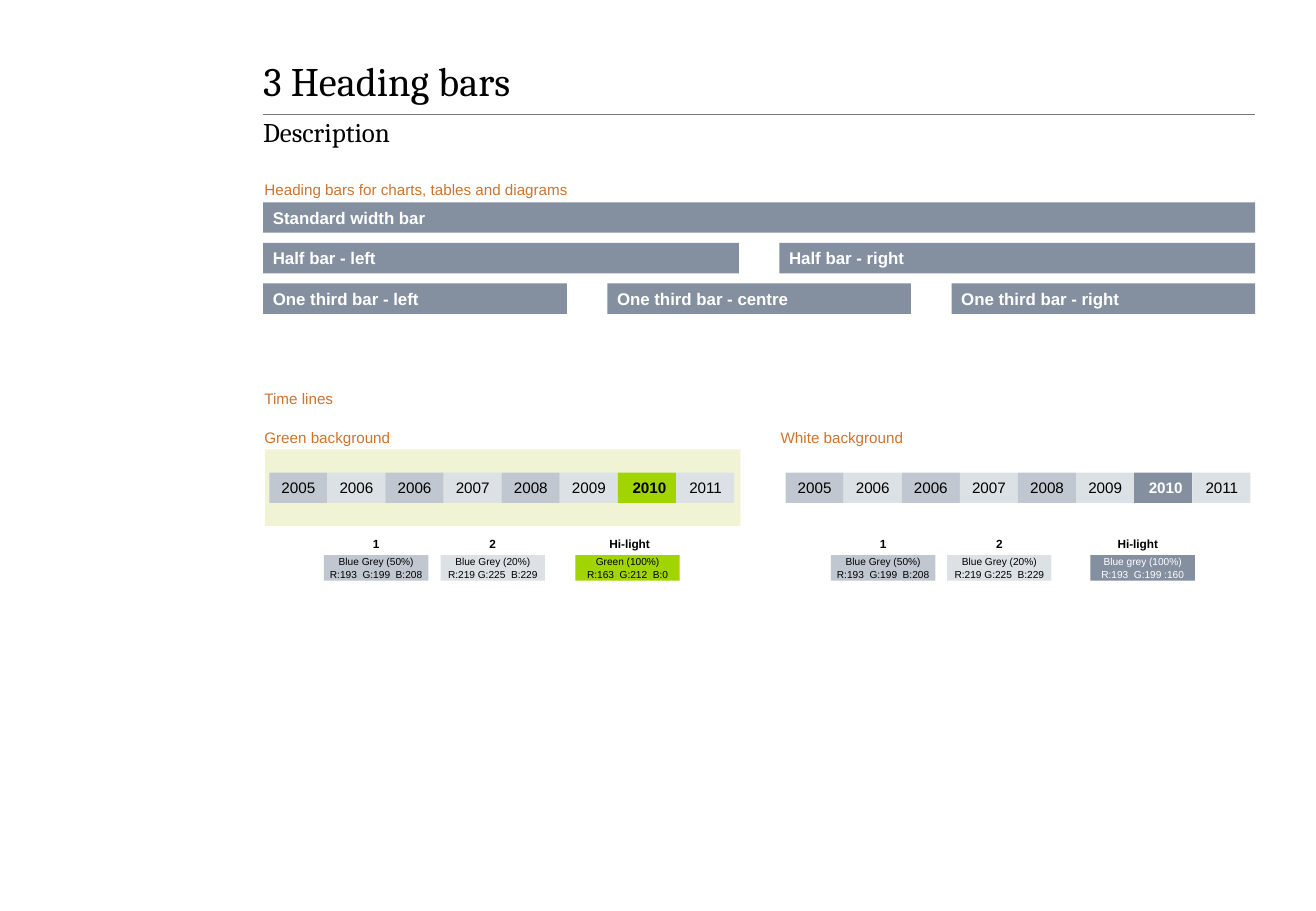
from dataclasses import dataclass

import pptx
import pptx.dml.color
import pptx.enum.shapes
import pptx.enum.text
import pptx.oxml
import pptx.shapes.autoshape
import pptx.util
from pptx.dml.color import RGBColor

Align = pptx.enum.text.PP_ALIGN
Anchor = pptx.enum.text.MSO_ANCHOR

BLACK = RGBColor(0x00, 0x00, 0x00)
WHITE = RGBColor(0xFF, 0xFF, 0xFF)
ORANGE = RGBColor(0xCF, 0x74, 0x2F)
RULE_GREY = RGBColor(0x78, 0x78, 0x78)
BLUE_GREY = RGBColor(0x84, 0x8F, 0xA0)
BLUE_GREY_50 = RGBColor(0xC1, 0xC7, 0xD0)
BLUE_GREY_20 = RGBColor(0xDB, 0xE1, 0xE5)
GREEN = RGBColor(0xA2, 0xD4, 0x00)
PALE_GREEN = RGBColor(0xF0, 0xF4, 0xD4)

# The grid is square: 32.5 columns by 22.5 rows, three cells to the inch.
COLUMNS, ROWS = 32.5, 22.5
LEFT, WIDTH, GUTTER = 6.5, 24.5, 1
BAR_HEIGHT = 0.75
BAR_TOP = 5
TIMELINE_TOP = 11.67
SWATCH_TOP, SWATCH_WIDTH, SWATCH_HEIGHT = 13.71, 2.58, 0.63
LABEL_TOP, LABEL_WIDTH, LABEL_HEIGHT = 13.26, 1.5, 0.36
YEARS = ["2005", "2006", "2006", "2007", "2008", "2009", "2010", "2011"]
HIGHLIGHT_YEAR = "2010"
BAR_ROWS = [
    ["Standard width bar"],
    ["Half bar - left", "Half bar - right"],
    ["One third bar - left", "One third bar - centre", "One third bar - right"],
]


@dataclass(frozen=True)
class Area:
    """A rectangle in grid cells."""
    left: float
    top: float
    width: float
    height: float

    def lengths(self) -> list[pptx.util.Length]:
        return [grid(n) for n in (self.left, self.top, self.width, self.height)]


@dataclass(frozen=True)
class Style:
    size: float
    colour: RGBColor = BLACK
    bold: bool = False
    align: Align = Align.LEFT
    font: str = "Arial"
    inset: float = 0
    anchor: Anchor = Anchor.MIDDLE
    wrap: bool = True
    spacing: float = 1.0


@dataclass(frozen=True)
class Swatch:
    label: str
    text: str
    offset: float
    fill: RGBColor
    colour: RGBColor = BLACK
    label_shift: float = 0


@dataclass(frozen=True)
class Timeline:
    caption: str
    highlight: RGBColor
    highlight_text: RGBColor
    swatches: list[Swatch]


LIGHT_50 = "Blue Grey (50%)\vR:193  G:199  B:208"
LIGHT_20 = "Blue Grey (20%)\vR:219 G:225  B:229"
TIMELINES = [
    Timeline("Green background", GREEN, BLACK, [
        Swatch("1", LIGHT_50, 1.5, BLUE_GREY_50),
        Swatch("2", LIGHT_20, 4.38, BLUE_GREY_20),
        Swatch("Hi-light", "Green (100%)\vR:163  G:212  B:0", 7.71, GREEN,
               label_shift=0.05),
    ]),
    Timeline("White background", BLUE_GREY, WHITE, [
        Swatch("1", LIGHT_50, 1.27, BLUE_GREY_50),
        Swatch("2", LIGHT_20, 4.14, BLUE_GREY_20),
        Swatch("Hi-light", "Blue grey (100%)\vR:193  G:199 :160", 7.68,
               BLUE_GREY, WHITE, label_shift=-0.12),
    ]),
]

TITLE = Style(24, font="Cambria")
SUBTITLE = Style(16, font="Cambria", anchor=Anchor.TOP)
CAPTION = Style(9, ORANGE, anchor=Anchor.TOP, spacing=1.05)
BAR = Style(10, WHITE, bold=True, inset=0.24)
YEAR = Style(9, align=Align.RIGHT, inset=0.3, wrap=False)
LABEL = Style(7, bold=True, align=Align.CENTER, anchor=Anchor.TOP)


def grid(cells: float) -> pptx.util.Length:
    return pptx.util.Inches(cells / 3)


def column(count: int, index: int, top: float, height: float) -> Area:
    """One of count equal columns across the content width."""
    width = (WIDTH - GUTTER * (count - 1)) / count
    return Area(LEFT + index * (width + GUTTER), top, width, height)


def write(shape, text: str, style: Style, bottom: float = 0) -> None:
    frame = shape.text_frame
    frame.word_wrap = style.wrap
    frame.vertical_anchor = style.anchor
    frame.margin_left = frame.margin_right = grid(style.inset)
    frame.margin_top, frame.margin_bottom = 0, grid(bottom)
    para = frame.paragraphs[0]
    para.text = text
    para.alignment = style.align
    para.line_spacing = style.spacing
    para.font.name = style.font
    para.font.size = pptx.util.Pt(style.size)
    para.font.bold = style.bold
    para.font.color.rgb = style.colour


def add_text(shapes, area: Area, text: str, style: Style, bottom: float = 0) -> None:
    write(shapes.add_textbox(*area.lengths()), text, style, bottom)


def add_box(shapes, area: Area, fill: RGBColor) -> pptx.shapes.autoshape.Shape:
    box = shapes.add_shape(pptx.enum.shapes.MSO_SHAPE.RECTANGLE, *area.lengths())
    box.shadow.inherit = False
    box.fill.solid()
    box.fill.fore_color.rgb = fill
    box.line.fill.background()
    return box


def add_header(shapes) -> None:
    rule = shapes.add_connector(pptx.enum.shapes.MSO_CONNECTOR.STRAIGHT, grid(LEFT),
                                grid(2.82), grid(LEFT + WIDTH), grid(2.82))
    rule.line.color.rgb = RULE_GREY
    rule.line.width = pptx.util.Pt(0.5)
    rule.element.spPr.append(pptx.oxml.parse_xml(
        '<a:effectLst xmlns:a="http://schemas.openxmlformats.org/drawingml/2006/main"/>'))
    add_text(shapes, column(1, 0, 1.59, 1.17), "3\u00a0Heading bars", TITLE, 0.36)
    add_text(shapes, column(1, 0, 2.85, 1.05), "Description", SUBTITLE, 0.36)


def add_caption(shapes, area: Area, text: str) -> None:
    add_text(shapes, Area(area.left + 0.03, area.top, area.width, area.height), text, CAPTION)


def add_timeline(shapes, timeline: Timeline, half: Area) -> None:
    start, cell = half.left + 0.15, (half.width - 0.27) / len(YEARS)
    years = shapes.add_group_shape().shapes
    for index, year in enumerate(YEARS):
        fill, style = (BLUE_GREY_50, BLUE_GREY_20)[index % 2], YEAR
        if year == HIGHLIGHT_YEAR:
            fill = timeline.highlight
            style = Style(9, timeline.highlight_text, True, Align.RIGHT, inset=0.24)
        area = Area(start + index * cell, TIMELINE_TOP, cell, BAR_HEIGHT)
        write(add_box(years, area, fill), year, style)


def add_swatch(shapes, swatch: Swatch, half: Area) -> None:
    left = half.left + swatch.offset
    area = Area(left, SWATCH_TOP, SWATCH_WIDTH, SWATCH_HEIGHT)
    style = Style(6, swatch.colour, align=Align.CENTER, wrap=False)
    write(add_box(shapes, area, swatch.fill), swatch.text, style)
    label_left = left + (SWATCH_WIDTH - LABEL_WIDTH) / 2 + swatch.label_shift
    add_text(shapes, Area(label_left, LABEL_TOP, LABEL_WIDTH, LABEL_HEIGHT),
             swatch.label, LABEL)


def main() -> None:
    deck = pptx.Presentation()
    deck.slide_width, deck.slide_height = grid(COLUMNS), grid(ROWS)
    shapes = deck.slides.add_slide(deck.slide_layouts[6]).shapes

    add_header(shapes)
    add_caption(shapes, column(1, 0, 4.44, 0.45), "Heading bars for charts, tables and diagrams")
    for row, names in enumerate(BAR_ROWS):
        for index, name in enumerate(names):
            area = column(len(names), index, BAR_TOP + row, BAR_HEIGHT)
            write(add_box(shapes, area, BLUE_GREY), name, BAR)

    add_caption(shapes, column(1, 0, 9.6, 0.45), "Time lines")
    add_box(shapes, Area(LEFT + 0.04, 11.1, 11.75, 1.89), PALE_GREEN)
    for index, timeline in enumerate(TIMELINES):
        half = column(2, index, 10.56, 0.45)
        add_caption(shapes, half, timeline.caption)
        add_timeline(shapes, timeline, half)
        for swatch in timeline.swatches:
            add_swatch(shapes, swatch, half)

    deck.save("out.pptx")


if __name__ == "__main__":
    main()
